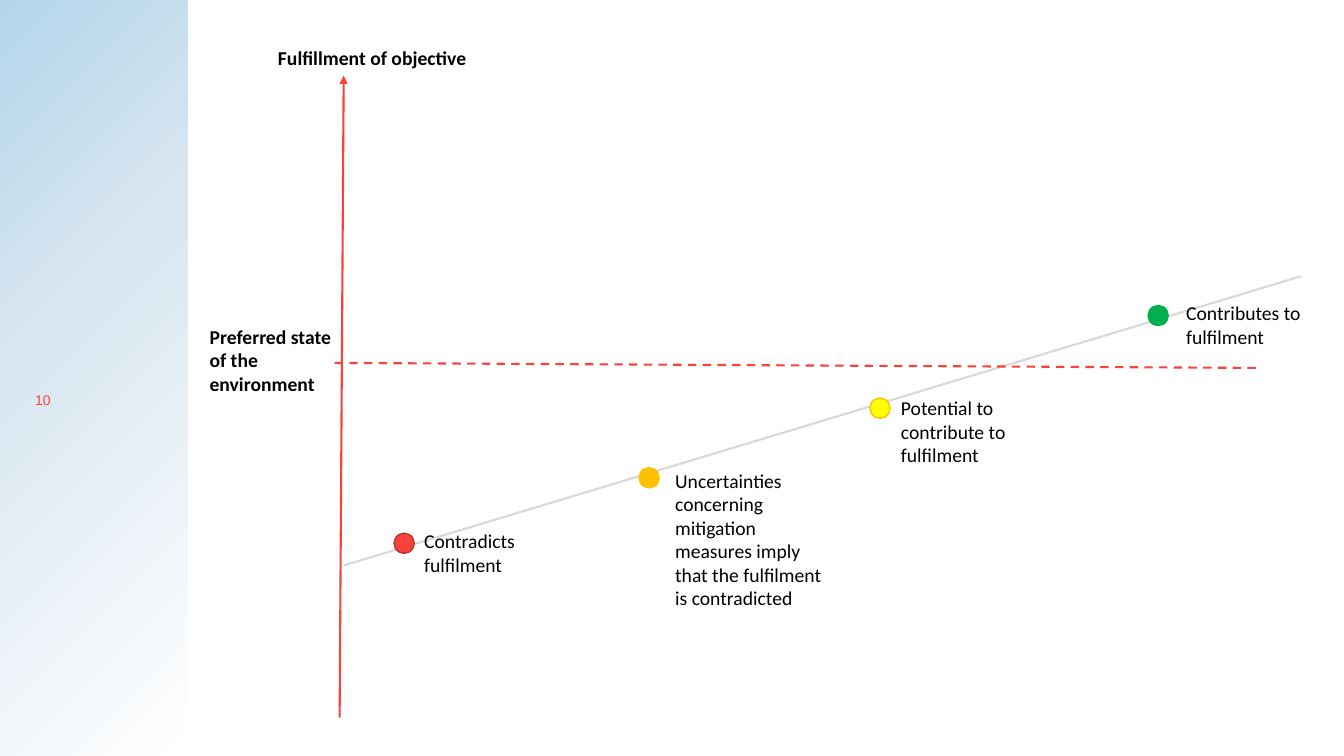
from lxml.etree import SubElement
from pptx import Presentation
from pptx.dml.color import RGBColor
from pptx.enum.dml import MSO_LINE
from pptx.enum.shapes import MSO_CONNECTOR, MSO_SHAPE
from pptx.enum.text import MSO_ANCHOR, MSO_AUTO_SIZE
from pptx.oxml import parse_xml
from pptx.oxml.ns import nsdecls, qn
from pptx.util import Pt

COLORS = {
    "black": "000000", "grey": "D9D9D6", "red": "F9423A", "dark red": "B8312B",
    "number": "FF4337", "yellow": "FFFF00", "orange": "FFC000", "green": "00B050",
}
PANEL_STOPS = [(0, "B3D6EC"), (39, "D8E6F0"), (100, "FFFFFF")]
DOT_SIZE = 14.4
RATINGS = [
    ("Contradicts fulfilment", "red", "dark red", (147.5, 380.9), (14.4, -6.5), (95, 41)),
    ("Uncertainties concerning mitigation measures imply that the fulfilment is contradicted",
     "orange", "orange", (322.5, 334.1), (18.7, -2.9), (127.4, 126)),
    ("Potential to contribute to fulfilment", "yellow", "orange",
     (487.4, 284.4), (15.1, -5), (120.2, 58.3)),
    ("Contributes to fulfilment", "green", "green", (686.1, 218.2), (20.1, -6.5), (104.4, 41)),
]


def color(name):
    """Return the named colour of the palette."""
    return RGBColor.from_string(COLORS[name])


def add_text(page, text, left, top, width, height, size=14, font="Calibri",
             fill="black", bold=False, anchor=MSO_ANCHOR.TOP, grow=True):
    """Add a wrapped text box holding one formatted paragraph."""
    box = page.shapes.add_textbox(Pt(left), Pt(top), Pt(width), Pt(height))
    frame = box.text_frame
    frame.word_wrap = True
    frame.vertical_anchor = anchor
    frame.auto_size = MSO_AUTO_SIZE.SHAPE_TO_FIT_TEXT if grow else MSO_AUTO_SIZE.NONE
    span = frame.paragraphs[0].add_run()
    span.text = text
    span.font.size = Pt(size)
    span.font.name = font
    span.font.bold = bold
    span.font.color.rgb = color(fill)


def add_line(page, start, end, stroke, dash=None, arrow=False):
    """Add a straight line, optionally dashed or with an arrowhead at its end."""
    line = page.shapes.add_connector(
        MSO_CONNECTOR.STRAIGHT, *[Pt(value) for value in (*start, *end)])
    line.line.color.rgb = color(stroke)
    line.line.width = Pt(1.5)
    if dash:
        line.line.dash_style = dash
    if arrow:
        SubElement(line.line._get_or_add_ln(), qn("a:tailEnd"), type="triangle")
    SubElement(line._element.spPr, qn("a:effectLst"))


def add_dot(page, left, top, fill, outline):
    """Add a round marker."""
    dot = page.shapes.add_shape(
        MSO_SHAPE.OVAL, Pt(left), Pt(top), Pt(DOT_SIZE), Pt(DOT_SIZE))
    dot.shadow.inherit = False
    dot.fill.solid()
    dot.fill.fore_color.rgb = color(fill)
    dot.line.color.rgb = color(outline)
    dot.line.width = Pt(1)


def add_side_panel(page, left, top, width, height):
    """Draw the gradient side panel with the page number."""
    panel = page.shapes.add_shape(
        MSO_SHAPE.RECTANGLE, Pt(left), Pt(top), Pt(width), Pt(height))
    panel.shadow.inherit = False
    panel.line.fill.background()
    stops = "".join(
        f'<a:gs pos="{position * 1000}"><a:srgbClr val="{value}"/></a:gs>'
        for position, value in PANEL_STOPS)
    gradient = parse_xml(
        f'<a:gradFill {nsdecls("a")} rotWithShape="1"><a:gsLst>{stops}</a:gsLst>'
        '<a:path path="circle"><a:fillToRect r="100000" b="100000"/></a:path></a:gradFill>')
    panel._element.spPr.find(qn("a:prstGeom")).addnext(gradient)
    add_text(page, "10", left + 18, top + 272.9, width - 23, 25.2, size=10, font="Arial",
             fill="number", anchor=MSO_ANCHOR.MIDDLE, grow=False)


def add_objective_diagram(page, left, top):
    """Draw the axis, the reference and trend lines, and the rated points."""
    def place(x, y):
        """Move a diagram position onto the page."""
        return left + x, top + y

    add_line(page, place(111.5, 403.9), place(795.5, 197.3), "grey")
    add_line(page, place(105, 259.2), place(764.6, 262.8), "red", dash=MSO_LINE.DASH)
    add_line(page, place(108.6, 512.6), place(111.5, 54), "red", arrow=True)
    add_text(page, "Preferred state of the environment", *place(8.6, 228.2), 106.6, 58.3,
             bold=True)
    add_text(page, "Fulfillment of objective", *place(57.5, 29.5), 156.2, 24.5, bold=True)
    for text, fill, outline, (x, y), (shift_x, shift_y), size in RATINGS:
        add_dot(page, *place(x, y), fill, outline)
        add_text(page, text, *place(x + shift_x, y + shift_y), *size)


def main():
    """Build the deck and save it."""
    deck = Presentation()
    deck.slide_width, deck.slide_height = Pt(960), Pt(540)
    page = deck.slides.add_slide(deck.slide_layouts[6])
    add_side_panel(page, 0, 0, 134, 540)
    add_objective_diagram(page, 134, 0)
    deck.save("out.pptx")


if __name__ == "__main__":
    main()
